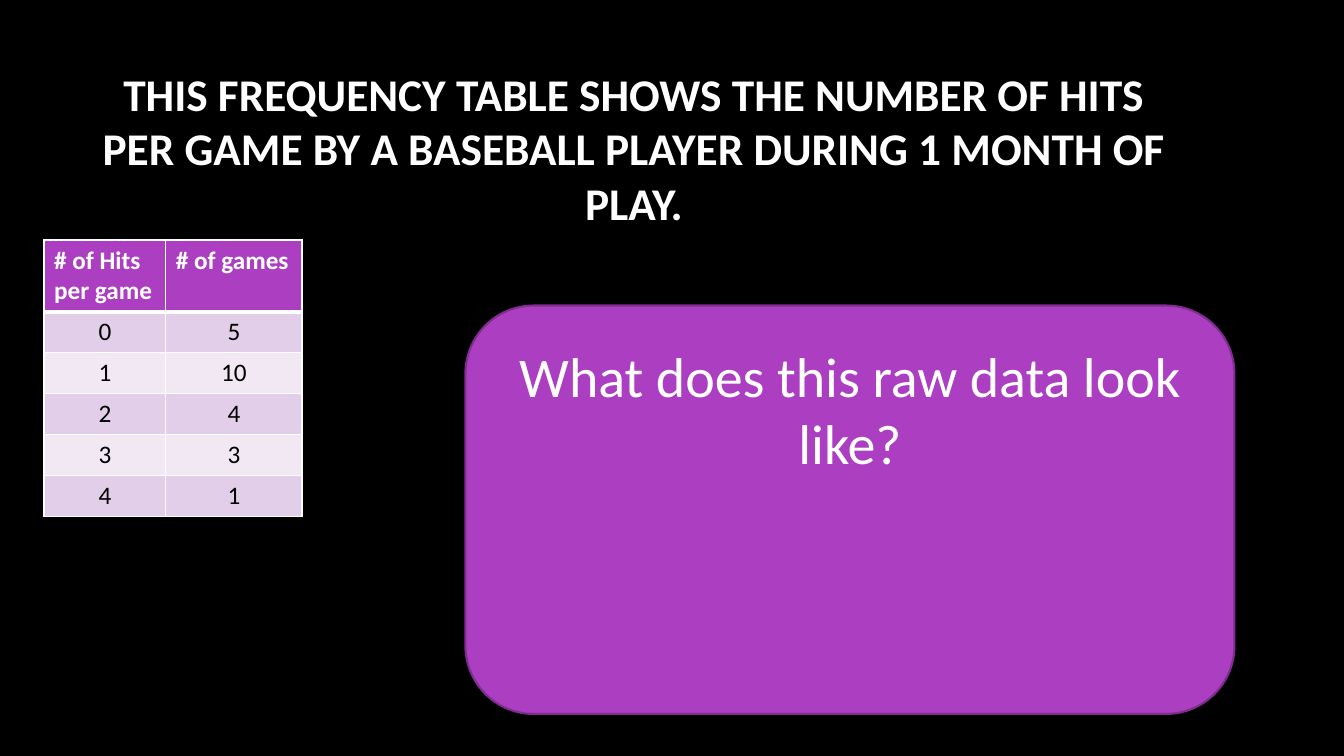
from lxml.etree import SubElement
from pptx import Presentation
from pptx.dml.color import RGBColor
from pptx.enum.shapes import MSO_SHAPE
from pptx.enum.text import MSO_ANCHOR, MSO_AUTO_SIZE, PP_ALIGN
from pptx.oxml.ns import qn
from pptx.util import Cm, Pt

COLORS = {
    "black": "000000",
    "white": "FFFFFF",
    "purple": "AC3EC1",
    "outline": "7F2E8F",
    "band_dark": "E3CEE9",
    "band_light": "F1E8F4",
}


def style(p, size, color, bold=False, align=PP_ALIGN.CENTER):
    p.alignment = align
    p.font.name = "Calibri"
    p.font.size = Pt(size)
    p.font.bold = bold
    p.font.color.rgb = RGBColor.from_string(COLORS[color])


def add_border(cell, side, width):
    ln = SubElement(cell._tc.get_or_add_tcPr(), qn(f"a:ln{side}"), w=str(Pt(width)))
    fill = SubElement(ln, qn("a:solidFill"))
    SubElement(fill, qn("a:srgbClr"), val=COLORS["white"])


prs = Presentation()
prs.slide_width = Cm(33.87)
prs.slide_height = Cm(19.05)
s = prs.slides.add_slide(prs.slide_layouts[5])
s.background.fill.solid()
s.background.fill.fore_color.rgb = RGBColor.from_string(COLORS["black"])

title = s.shapes.title
title.left, title.top, title.width, title.height = Cm(1.9), Cm(1.7), Cm(28.15), Cm(4.04)
tf = title.text_frame
tf.text = "THIS FREQUENCY TABLE SHOWS THE NUMBER OF HITS PER GAME BY A BASEBALL PLAYER DURING 1 MONTH OF PLAY."
tf.word_wrap = True
tf.auto_size = MSO_AUTO_SIZE.NONE
tf.vertical_anchor = MSO_ANCHOR.MIDDLE
style(tf.paragraphs[0], 32.4, "white", bold=True)

rows = [
    ("# of Hits per game", "# of games"),
    ("0", "5"),
    ("1", "10"),
    ("2", "4"),
    ("3", "3"),
    ("4", "1"),
]
row_height = Cm(1.03)
table = s.shapes.add_table(
    len(rows), 2, Cm(1.11), Cm(6.05), Cm(6.5), row_height * len(rows)
).table
table.columns[0].width = Cm(3.07)
table.columns[1].width = Cm(3.43)
for i, row in enumerate(rows):
    table.rows[i].height = row_height
    band = "purple" if i == 0 else "band_dark" if i % 2 else "band_light"
    for j, text in enumerate(row):
        cell = table.cell(i, j)
        cell.text = text
        p = cell.text_frame.paragraphs[0]
        if i == 0:
            style(p, 18, "white", bold=True, align=PP_ALIGN.LEFT)
        else:
            style(p, 18, "black")
        add_border(cell, "L", 1)
        add_border(cell, "R", 1)
        add_border(cell, "T", 3 if i == 1 else 1)
        add_border(cell, "B", 3 if i == 0 else 1)
        cell.fill.solid()
        cell.fill.fore_color.rgb = RGBColor.from_string(COLORS[band])

sp = s.shapes.add_shape(
    MSO_SHAPE.ROUNDED_RECTANGLE, Cm(11.73), Cm(7.7), Cm(19.38), Cm(10.29)
)
sp.shadow.inherit = False
sp.fill.solid()
sp.fill.fore_color.rgb = RGBColor.from_string(COLORS["purple"])
sp.line.color.rgb = RGBColor.from_string(COLORS["outline"])
sp.line.width = Pt(1.5)
tf = sp.text_frame
tf.text = "What does this raw data look like?"
tf.word_wrap = True
tf.vertical_anchor = MSO_ANCHOR.TOP
tf.margin_top = Cm(0.4)
style(tf.paragraphs[0], 40, "white")

prs.save("out.pptx")
